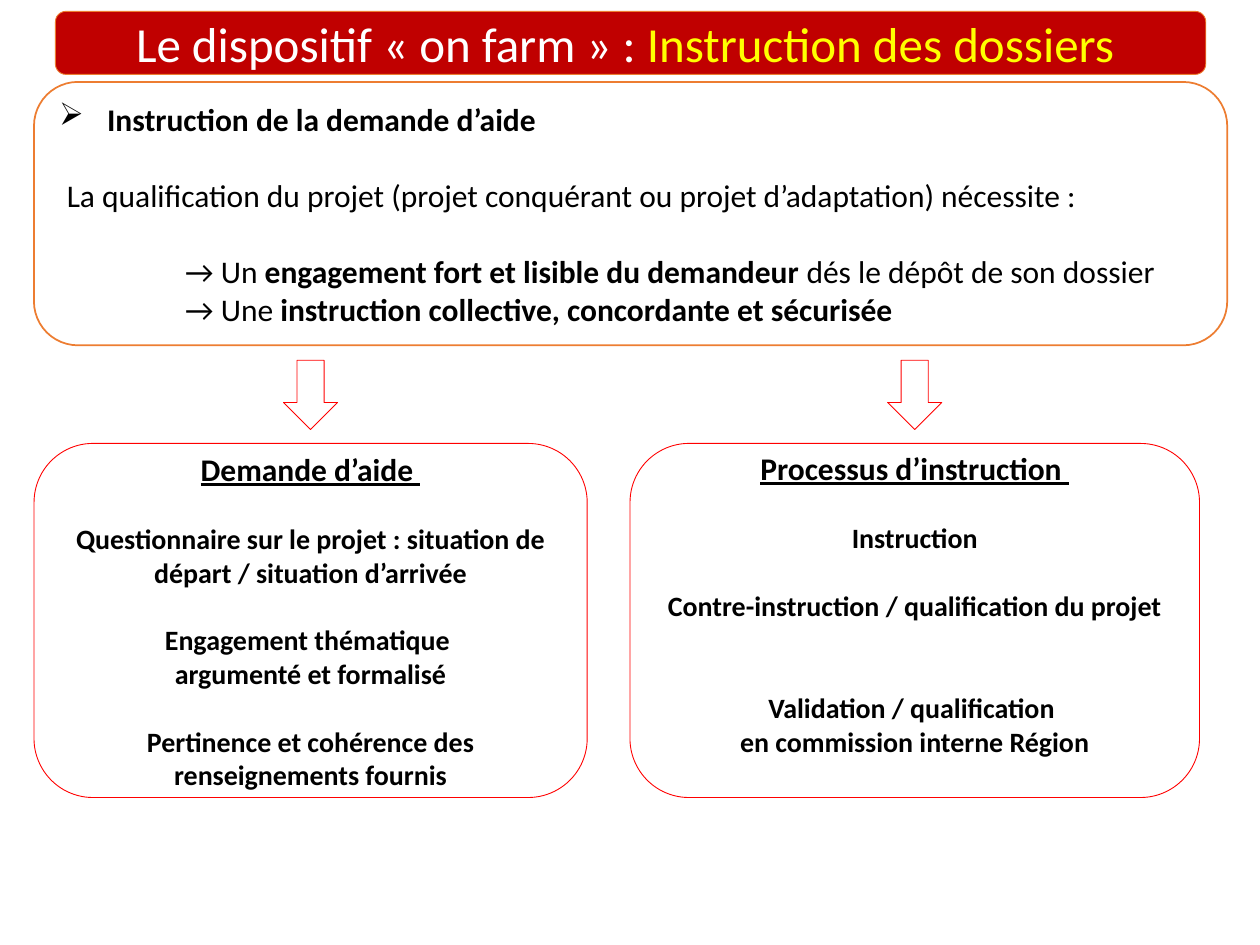
from lxml.etree import SubElement
from pptx import Presentation
from pptx.dml.color import RGBColor
from pptx.enum.shapes import MSO_SHAPE as SHAPE
from pptx.enum.text import MSO_ANCHOR as ANCHOR, PP_ALIGN as ALIGN
from pptx.oxml.ns import qn
from pptx.util import Inches, Pt

WHITE = RGBColor(0xFF, 0xFF, 0xFF)
BLACK = RGBColor(0, 0, 0)
YELLOW = RGBColor(0xFF, 0xFF, 0)
RED = RGBColor(0xFF, 0, 0)
DARK_RED = RGBColor(0xC0, 0, 0)
ORANGE = RGBColor(0xED, 0x7D, 0x31)

prs = Presentation()
prs.slide_width, prs.slide_height = Inches(10), Inches(7.5)
COL, ROW = prs.slide_width / 100, prs.slide_height / 100
s = prs.slides.add_slide(prs.slide_layouts[6])


def add_shape(kind, left, top, width, height, fill, line, weight):
    """Places and sizes are in hundredths of the slide."""
    sp = s.shapes.add_shape(kind, round(left * COL), round(top * ROW),
                            round(width * COL), round(height * ROW))
    sp.shadow.inherit = False
    sp.fill.solid()
    sp.fill.fore_color.rgb = fill
    sp.line.color.rgb = line
    sp.line.width = Pt(weight)
    sp.text_frame.word_wrap = True
    sp.text_frame.vertical_anchor = ANCHOR.MIDDLE
    return sp


def add_paragraph(tf, runs, align, size, before=0, color=BLACK):
    """Each run is a text and a dict of font values."""
    p = tf.paragraphs[0] if not tf.text else tf.add_paragraph()
    p.alignment = align
    p.space_before = Pt(before)
    for text, values in runs:
        r = p.add_run()
        r.text = text
        r.font.color.rgb = values.get("color", color)
        fmt = {"name": "Calibri", "size": Pt(size), **values}
        fmt.pop("color", None)
        for name, value in fmt.items():
            setattr(r.font, name, value)
    return p


BOLD = {"bold": True}
HEADING = {"bold": True, "underline": True}

# Title banner
sp = add_shape(SHAPE.ROUNDED_RECTANGLE, 4.4, 1.2, 91.3, 6.67, DARK_RED, ORANGE, 0.5)
add_paragraph(sp.text_frame, [("Le dispositif «\u00a0on farm\u00a0» : ".replace("\u00a0", " "), {}),
                              ("Instruction des dossiers ", {"color": YELLOW})],
              ALIGN.CENTER, 28, color=WHITE)

# Requirements: space before, left margin and first-line indent in inches, bullet, runs
REQUIREMENTS = [
    (0, 0.38, -0.38, "➢", [("Instruction de la demande d’aide", BOLD)]),
    (22, 0.06, 0, None, [("La qualification du projet (projet conquérant ou projet "
                          "d’adaptation) nécessite :", {})]),
    (22, 1, 0, None, [("→ Un ", {}), ("engagement fort et lisible du demandeur ", BOLD),
                      ("dés le dépôt de son dossier", {})]),
    (0, 1, 0, None, [("→ Une ", {}),
                     ("instruction collective, concordante et sécurisée", BOLD)]),
]
sp = add_shape(SHAPE.ROUNDED_RECTANGLE, 2.7, 8.67, 94.7, 27.87, WHITE, ORANGE, 1)
for before, margin, indent, bullet, runs in REQUIREMENTS:
    p = add_paragraph(sp.text_frame, runs, ALIGN.LEFT, 18, before)
    pPr = p._p.get_or_add_pPr()
    pPr.set("marL", str(Inches(margin)))
    pPr.set("indent", str(Inches(indent)))
    if bullet:
        SubElement(pPr, qn("a:buChar")).set("char", bullet)

# Two columns under arrows: left, width, bottom inset, heading, (lines skipped, text)
LINE = 19.5
COLUMNS = [
    (2.7, 43.9, 0.05, "Demande d’aide ", [
        (1, "Questionnaire sur le projet : situation de départ / situation d’arrivée"),
        (1, "Engagement thématique "),
        (0, "argumenté et formalisé"),
        (1, "Pertinence et cohérence des renseignements fournis")]),
    (50, 45.2, 0.32, "Processus d’instruction ", [
        (1, "Instruction"),
        (1, "Contre-instruction / qualification du projet"),
        (2, "Validation / qualification "),
        (0, "en commission interne Région")]),
]
ARROW_WIDTH = 4.3
for left, width, inset, heading, lines in COLUMNS:
    add_shape(SHAPE.DOWN_ARROW, left + (width - ARROW_WIDTH) / 2, 38.13,
              ARROW_WIDTH, 7.33, WHITE, RED, 0.5)
    sp = add_shape(SHAPE.ROUNDED_RECTANGLE, left, 46.93, width, 37.47, WHITE, RED, 0.5)
    tf = sp.text_frame
    tf.margin_bottom = Inches(inset)
    add_paragraph(tf, [(heading, HEADING)], ALIGN.CENTER, 18)
    for skipped, text in lines:
        add_paragraph(tf, [(text, BOLD)], ALIGN.CENTER, 16, skipped * LINE)

prs.save("out.pptx")
